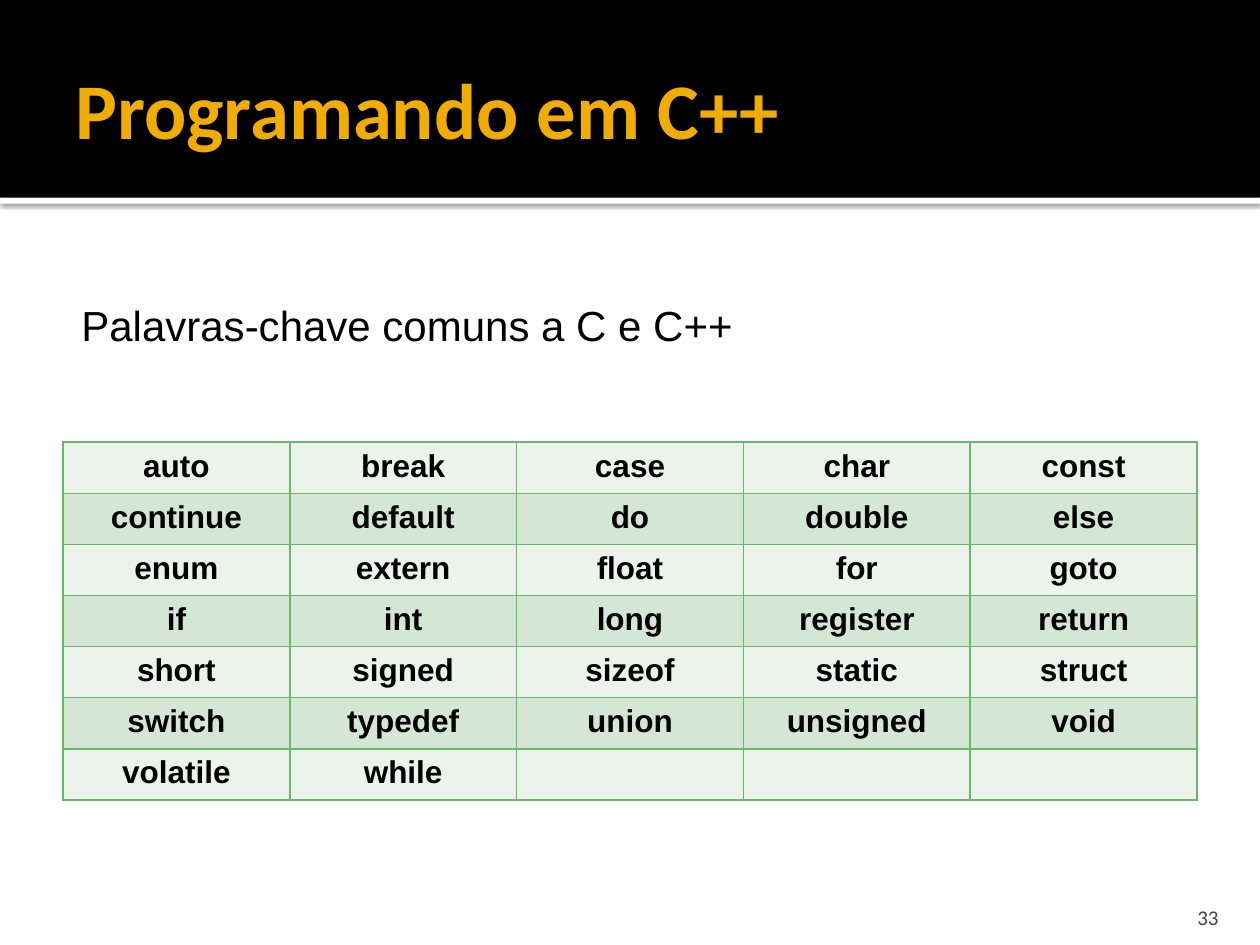
from collections import namedtuple

from lxml.etree import SubElement
from pptx import Presentation
from pptx.dml.color import RGBColor
from pptx.enum.shapes import MSO_SHAPE as Shape
from pptx.enum.text import MSO_ANCHOR as Anchor, PP_ALIGN as Align
from pptx.oxml.ns import qn
from pptx.util import Inches, Pt

COLORS = {
    "band": "000000", "rule": "FFFFFF", "shadow": "000000",
    "title": "F0AD00", "text": "000000", "number": "454545",
    "light_row": "EBF3EB", "dark_row": "D4E6D4", "border": "6BB76D",
}
KEYWORDS = """auto break case char const
continue default do double else
enum extern float for goto
if int long register return
short signed sizeof static struct
switch typedef union unsigned void
volatile while"""
COLUMN_COUNT = 5
GRID = Inches(0.5)

Box = namedtuple("Box", "left top width height")


def grid_box(left, top, width, height):
    """Turn columns and rows of the 20 by 15 slide grid into lengths."""
    return Box(*(round(GRID * value) for value in (left, top, width, height)))


def color(name):
    """Look up a named colour."""
    return RGBColor.from_string(COLORS[name])


def add_run(paragraph, text, size, font_name, color_name, bold=False):
    """Append one formatted run to a paragraph."""
    run = paragraph.add_run()
    run.text = text
    font = run.font
    font.size, font.name, font.bold = Pt(size), font_name, bold
    font.color.rgb = color(color_name)


def add_rectangle(slide, box, color_name):
    """Draw a plain rectangle without outline or shadow."""
    shape = slide.shapes.add_shape(Shape.RECTANGLE, *box)
    shape.shadow.inherit = False
    shape.fill.solid()
    shape.fill.fore_color.rgb = color(color_name)
    shape.line.fill.background()
    return shape


def add_text(slide, box, anchor, align, margins, wrap=True):
    """Place an empty text box and return its first paragraph."""
    frame = slide.shapes.add_textbox(*box).text_frame
    frame.word_wrap = wrap
    frame.vertical_anchor = anchor
    (frame.margin_left, frame.margin_top,
     frame.margin_right, frame.margin_bottom) = map(Inches, margins)
    paragraph = frame.paragraphs[0]
    paragraph.alignment = align
    return paragraph


def add_drop_shadow(shape):
    """Cast a soft shadow straight below a shape."""
    effects = shape._element.spPr.find(qn("a:effectLst"))
    shadow = SubElement(effects, qn("a:outerShdw"), blurRad=str(Pt(2.5)),
                        dist=str(Pt(0.8)), dir="5400000", algn="tl", rotWithShape="0")
    tone = SubElement(shadow, qn("a:srgbClr"), val=COLORS["shadow"])
    SubElement(tone, qn("a:alpha"), val="60000")


def add_header(slide, box):
    """Build the title band with its shadowed rule below."""
    rule_height = round(box.height * 0.03)
    rule = add_rectangle(
        slide, Box(box.left, box.top + box.height, box.width, rule_height), "rule")
    add_drop_shadow(rule)
    add_rectangle(slide, box, "band")
    title_box = Box(box.left + round(box.width * 0.05), box.top + round(box.height * 0.11),
                    round(box.width * 0.86), round(box.height * 0.87))
    paragraph = add_text(slide, title_box, Anchor.MIDDLE, Align.LEFT,
                         (0.1, 0.05, 0.05, 0.05))
    add_run(paragraph, "Programando em C++", 45, "Calibri", "title", bold=True)


def add_subtitle(slide, box):
    """Write the line that introduces the table."""
    paragraph = add_text(slide, box, Anchor.TOP, Align.CENTER,
                         (0.1, 0.05, 0.1, 0.05), wrap=False)
    add_run(paragraph, "Palavras-chave comuns a C e C++", 24, "Arial", "text")


def add_borders(cell):
    """Outline the four sides of a table cell."""
    properties = cell._tc.get_or_add_tcPr()
    for index, side in enumerate(("lnL", "lnR", "lnT", "lnB")):
        line = SubElement(properties, qn(f"a:{side}"), w=str(Pt(1)))
        fill = SubElement(line, qn("a:solidFill"))
        SubElement(fill, qn("a:srgbClr"), val=COLORS["border"])
        properties.insert(index, line)


def add_keyword_table(slide, box):
    """Fill a banded table with the keywords, row by row."""
    rows = [line.split() for line in KEYWORDS.splitlines()]
    table = slide.shapes.add_table(len(rows), COLUMN_COUNT, *box).table
    table.first_row = table.horz_banding = False
    for row_index, words in enumerate(rows):
        band = "dark_row" if row_index % 2 else "light_row"
        for column_index in range(COLUMN_COUNT):
            cell = table.cell(row_index, column_index)
            cell.fill.solid()
            cell.fill.fore_color.rgb = color(band)
            add_borders(cell)
            if column_index < len(words):
                paragraph = cell.text_frame.paragraphs[0]
                paragraph.alignment = Align.CENTER
                add_run(paragraph, words[column_index], 18, "Arial", "text", bold=True)


def add_slide_number(slide, box):
    """Write the slide number at the lower right."""
    paragraph = add_text(slide, box, Anchor.BOTTOM, Align.RIGHT, (0.1, 0.05, 0.1, 0))
    add_run(paragraph, "33", 12, "Calibri", "number")


def main():
    """Build and save the slide."""
    presentation = Presentation()
    presentation.slide_width, presentation.slide_height = GRID * 20, GRID * 15
    slide = presentation.slides.add_slide(presentation.slide_layouts[6])
    add_header(slide, grid_box(0, 0, 20, 3.14))
    add_keyword_table(slide, grid_box(1, 7.02, 18, 5.68))
    add_subtitle(slide, grid_box(1.04, 4.66, 10.84, 1))
    add_slide_number(slide, grid_box(17.94, 14.16, 1.6, 0.6))
    presentation.save("out.pptx")


if __name__ == "__main__":
    main()
